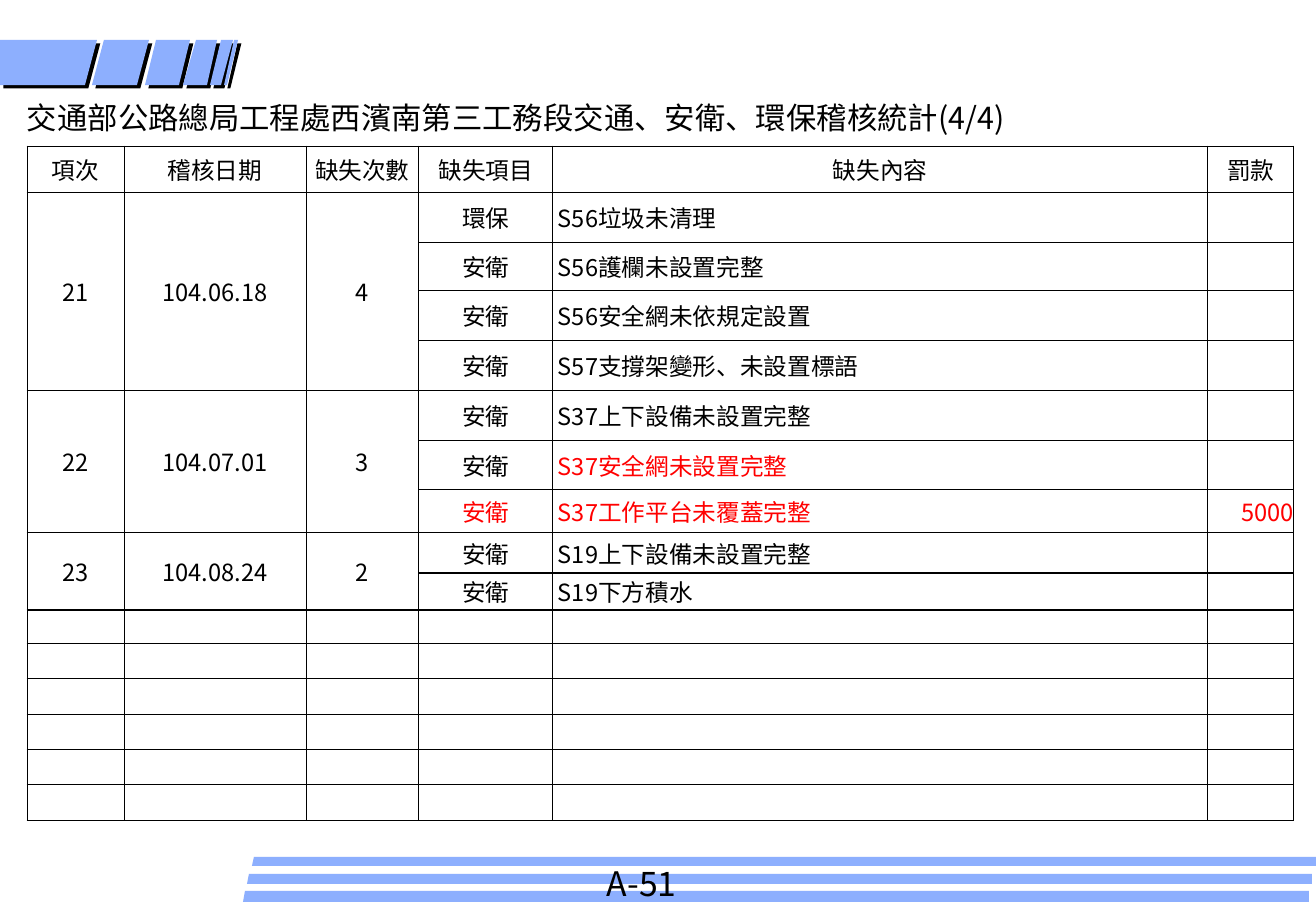
from dataclasses import dataclass

import pptx
import pptx.dml.color
import pptx.enum.text
import pptx.oxml.xmlchemy
import pptx.util
from lxml import etree
from pptx.oxml.ns import qn

SCALE = 7526
FONT = "Noto Sans CJK SC"
BLUE, BLACK, RED = "8DAFFE", "000000", "FF0000"
NO_STYLE = "{2D5ABB26-0587-4C30-8999-92F81FD0307C}"
LEFT, CENTER, RIGHT = (
    pptx.enum.text.PP_ALIGN.LEFT,
    pptx.enum.text.PP_ALIGN.CENTER,
    pptx.enum.text.PP_ALIGN.RIGHT,
)


@dataclass
class Slant:
    top: int
    bottom: int
    top_left: int
    top_right: int
    bottom_left: int
    bottom_right: int
    shadow: bool = False


@dataclass
class Finding:
    kind: str
    content: str
    kind_color: str = BLACK
    content_color: str = BLACK
    fine: str = ""


@dataclass
class Audit:
    number: str
    date: str
    findings: list[Finding]


STRIPES = [
    Slant(891, 902, 245, 1309, 243, 1309),
    Slant(874, 884, 249, 1312, 247, 1312),
    Slant(857, 866, 254, 1316, 252, 1316),
]
TILES = [
    Slant(40, 85, *xs, shadow=True)
    for xs in (
        (0, 97, 0, 85),
        (104, 149, 92, 137),
        (156, 190, 145, 179),
        (196, 217, 183, 207),
        (221, 233, 210, 221),
        (234, 238, 224, 227),
    )
]
TITLE = "交通部公路總局工程處西濱南第三工務段交通、安衛、環保稽核統計(4/4)"
HEADERS = ["項次", "稽核日期", "缺失次數", "缺失項目", "缺失內容", "罰款"]
AUDITS = [
    Audit("21", "104.06.18", [
        Finding("環保", "S56垃圾未清理"),
        Finding("安衛", "S56護欄未設置完整"),
        Finding("安衛", "S56安全網未依規定設置"),
        Finding("安衛", "S57支撐架變形、未設置標語"),
    ]),
    Audit("22", "104.07.01", [
        Finding("安衛", "S37上下設備未設置完整"),
        Finding("安衛", "S37安全網未設置完整", content_color=RED),
        Finding("安衛", "S37工作平台未覆蓋完整", RED, RED, "5000"),
    ]),
    Audit("23", "104.08.24", [
        Finding("安衛", "S19上下設備未設置完整"),
        Finding("安衛", "S19下方積水"),
    ]),
]
COLUMNS = [97, 182, 113, 134, 655, 86]
ROWS = [60, 46, 50, 48, 50, 50, 50, 50, 43, 40, 37, 34, 35, 36, 35, 35, 36]


def px(n: int) -> pptx.util.Emu:
    return pptx.util.Emu(n * SCALE)


def rgb(color: str) -> pptx.dml.color.RGBColor:
    return pptx.dml.color.RGBColor.from_string(color)


def add_slant(s, slant: Slant) -> None:
    builder = s.shapes.build_freeform(slant.top_left, slant.top, scale=SCALE)
    builder.add_line_segments([
        (slant.top_right, slant.top),
        (slant.bottom_right, slant.bottom),
        (slant.bottom_left, slant.bottom),
    ])
    sp = builder.convert_to_shape()
    sp.fill.solid()
    sp.fill.fore_color.rgb = rgb(BLUE)
    sp.line.fill.background()
    sp.shadow.inherit = False
    if slant.shadow:
        effects = sp._element.spPr.find(qn("a:effectLst"))
        shadow = etree.SubElement(effects, qn("a:outerShdw"), dist="35921", dir="2700000",
                                  algn="ctr", rotWithShape="0")
        etree.SubElement(shadow, qn("a:srgbClr"), val=BLACK)


def write(tf, text: str, size: int, color: str = BLACK, align=LEFT) -> None:
    tf.text = text
    p = tf.paragraphs[0]
    p.alignment = align
    r = p.runs[0]
    r.font.size = pptx.util.Pt(size)
    r.font.name = FONT
    r.font.color.rgb = rgb(color)
    etree.SubElement(r._r.get_or_add_rPr(), qn("a:ea"), typeface=FONT)


def write_cell(cell, text: str, color: str = BLACK, align=CENTER, size: int = 14) -> None:
    if text:
        write(cell.text_frame, text, size, color, align)


def edge_width(edge: int, column: int) -> float:
    return 1 if 10 <= edge <= 12 or (edge > 12 and column >= 3) else 0.5


def add_border(cell, side: str, width: float) -> None:
    ln = etree.SubElement(cell._tc.get_or_add_tcPr(), qn(f"a:ln{side}"),
                          w=str(pptx.util.Pt(width)))
    fill = etree.SubElement(ln, qn("a:solidFill"))
    etree.SubElement(fill, qn("a:srgbClr"), val=BLACK)


def finish_cell(cell, row: int, column: int) -> None:
    cell.margin_left = cell.margin_right = cell.margin_top = cell.margin_bottom = 0
    if column == 4 and row > 1:
        cell.margin_left = px(5)
    cell.vertical_anchor = pptx.enum.text.MSO_ANCHOR.MIDDLE
    if not cell.text_frame.text:
        etree.SubElement(cell.text_frame.paragraphs[0]._p, qn("a:endParaRPr"), sz="1000")
    if row > 0:
        add_border(cell, "L", 0.5)
        add_border(cell, "R", 0.5)
        add_border(cell, "T", edge_width(row, column))
    add_border(cell, "B", edge_width(row + cell.span_height, column))
    cell.fill.background()


def add_audit_table(s) -> None:
    frame = s.shapes.add_table(len(ROWS), len(COLUMNS), px(27), px(86),
                               px(sum(COLUMNS)), px(sum(ROWS)))
    table = frame.table
    table.first_row = table.horz_banding = False
    table._tbl.tblPr.find(qn("a:tableStyleId")).text = NO_STYLE
    for column, width in zip(table.columns, COLUMNS):
        column.width = px(width)
    for row, height in zip(table.rows, ROWS):
        row.height = px(height)

    table.cell(0, 0).merge(table.cell(0, 4))
    write_cell(table.cell(0, 0), TITLE, align=LEFT, size=18)
    for c, header in enumerate(HEADERS):
        write_cell(table.cell(1, c), header)

    first = 2
    for audit in AUDITS:
        count = len(audit.findings)
        for c, text in enumerate((audit.number, audit.date, str(count))):
            table.cell(first, c).merge(table.cell(first + count - 1, c))
            write_cell(table.cell(first, c), text)
        for r, finding in enumerate(audit.findings, first):
            write_cell(table.cell(r, 3), finding.kind, finding.kind_color)
            write_cell(table.cell(r, 4), finding.content, finding.content_color, LEFT)
            write_cell(table.cell(r, 5), finding.fine, RED, RIGHT)
        first += count

    for r in range(len(ROWS)):
        for c in range(len(COLUMNS)):
            finish_cell(table.cell(r, c), r, c)


def main() -> None:
    prs = pptx.Presentation()
    prs.slide_width, prs.slide_height = px(1316), px(911)
    s = prs.slides.add_slide(prs.slide_layouts[6])
    for slant in STRIPES + TILES:
        add_slant(s, slant)
    page = s.shapes.add_textbox(px(595), px(857), px(147), px(53))
    page.text_frame.word_wrap = True
    write(page.text_frame, "A-51", 20)
    add_audit_table(s)
    prs.save("out.pptx")


if __name__ == "__main__":
    main()
